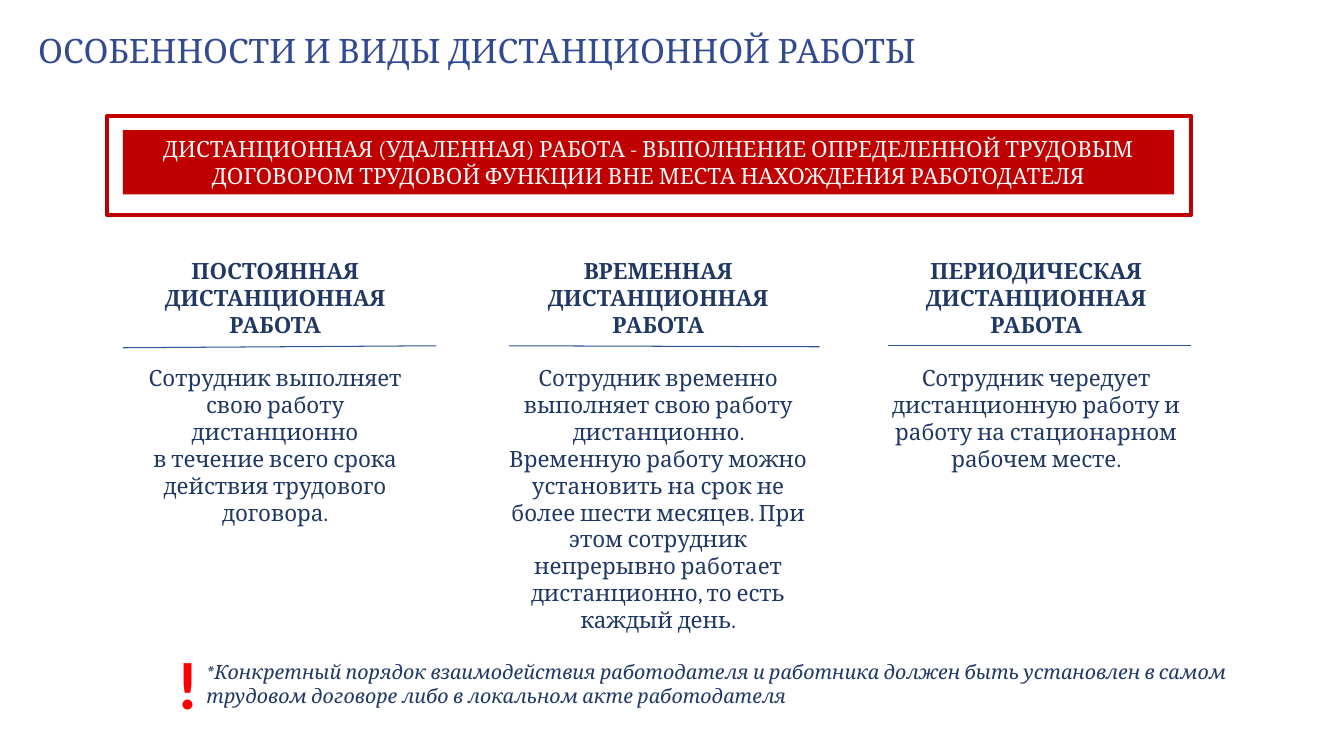
from pptx import Presentation
from pptx.dml.color import RGBColor
from pptx.enum.shapes import MSO_CONNECTOR as Connector, MSO_SHAPE as Shape
from pptx.enum.text import MSO_ANCHOR as Anchor, PP_ALIGN as Align
from pptx.oxml.ns import qn
from pptx.util import Pt
from lxml.etree import SubElement

NAVY = "203864"
RED = "C00000"
COLUMN_TOP = 180
COLUMN_WIDTH = 230.4

COLUMNS = [
    (81.4, 162.7, "ПОСТОЯННАЯ ДИСТАНЦИОННАЯ РАБОТА",
     ["Сотрудник выполняет свою работу дистанционно",
      "в течение всего срока действия трудового договора."],
     (87.8, 248.4, 311.8, 247)),
    (355, 259.2, "ВРЕМЕННАЯ ДИСТАНЦИОННАЯ РАБОТА",
     ["Сотрудник временно выполняет свою работу дистанционно. "
      "Временную работу можно установить на срок не более шести месяцев. "
      "При этом сотрудник непрерывно работает дистанционно, "
      "то есть каждый день."],
     (363.6, 247, 585.4, 247.7)),
    (625, 162.7, "ПЕРИОДИЧЕСКАЯ ДИСТАНЦИОННАЯ РАБОТА",
     ["Сотрудник чередует дистанционную работу "
      "и работу на стационарном рабочем месте."],
     (634.3, 247, 851, 247)),
]


def color(value):
    return RGBColor.from_string(value)


def style(para, size, shade, bold=None, italic=None, name="Cambria", align=Align.CENTER):
    para.alignment = align
    font = para.font
    font.name = name
    font.size = Pt(size)
    font.bold = bold
    font.italic = italic
    font.color.rgb = color(shade)


def add_text(shapes, left, top, width, height, text, size, shade, **looks):
    box = shapes.add_textbox(Pt(left), Pt(top), Pt(width), Pt(height))
    box.text_frame.word_wrap = True
    para = box.text_frame.paragraphs[0]
    para.text = text
    style(para, size, shade, **looks)
    return box


def add_rectangle(page, left, top, width, height):
    box = page.shapes.add_shape(Shape.RECTANGLE, Pt(left), Pt(top), Pt(width), Pt(height))
    box.shadow.inherit = False
    box.fill.background()
    box.line.fill.background()
    return box


def add_banner(page):
    banner = add_rectangle(page, 87.8, 92.9, 751, 46.1)
    banner.fill.solid()
    banner.fill.fore_color.rgb = color(RED)
    banner.text_frame.word_wrap = True
    para = banner.text_frame.paragraphs[0]
    para.text = ("ДИСТАНЦИОННАЯ (УДАЛЕННАЯ) РАБОТА - ВЫПОЛНЕНИЕ ОПРЕДЕЛЕННОЙ ТРУДОВЫМ "
                 "ДОГОВОРОМ ТРУДОВОЙ ФУНКЦИИ ВНЕ МЕСТА НАХОЖДЕНИЯ РАБОТОДАТЕЛЯ")
    style(para, 16, "F7F7F7")

    frame = add_rectangle(page, 76.3, 82.8, 774.7, 70.6)
    frame.line.color.rgb = color(RED)
    frame.line.width = Pt(3)


def add_rule(page, *ends):
    rule = page.shapes.add_connector(Connector.STRAIGHT, *map(Pt, ends))
    rule.line.color.rgb = color("2F5597")
    rule.line.width = Pt(0.75)
    SubElement(rule.element.spPr, qn("a:effectLst"))


def add_column(page, left, height, heading, body, ends):
    box = add_text(page.shapes, left, COLUMN_TOP, COLUMN_WIDTH, height, heading, 16, NAVY, bold=True)
    for index, text in enumerate(body):
        para = box.text_frame.add_paragraph()
        para.text = text
        style(para, 16, NAVY)
        if index == 0:
            para.space_before = Pt(19.2)
    add_rule(page, *ends)


def add_footnote(page):
    group = page.shapes.add_group_shape()
    note = add_text(group.shapes, 140.4, 468, 792, 41, "*", 14, NAVY, italic=True, align=Align.LEFT)
    para = note.text_frame.paragraphs[0]
    para.runs[0].font.bold = True
    span = para.add_run()
    span.text = ("Конкретный порядок взаимодействия работодателя и работника должен быть "
                 "установлен в самом трудовом договоре либо в локальном акте работодателя")
    mark = add_text(group.shapes, 106.6, 464.4, 54.7, 46.8, "!", 48, "FF0000", bold=True, name="Calibri")
    mark.text_frame.vertical_anchor = Anchor.MIDDLE


def main():
    deck = Presentation()
    deck.slide_width = Pt(960)
    deck.slide_height = Pt(540)
    page = deck.slides.add_slide(deck.slide_layouts[6])
    add_text(page.shapes, 20.2, 18, 677.5, 36, "ОСОБЕННОСТИ И ВИДЫ ДИСТАНЦИОННОЙ РАБОТЫ",
             24, "324A92", align=Align.LEFT)
    add_banner(page)
    for column in COLUMNS:
        add_column(page, *column)
    add_footnote(page)
    deck.save("out.pptx")


if __name__ == "__main__":
    main()
